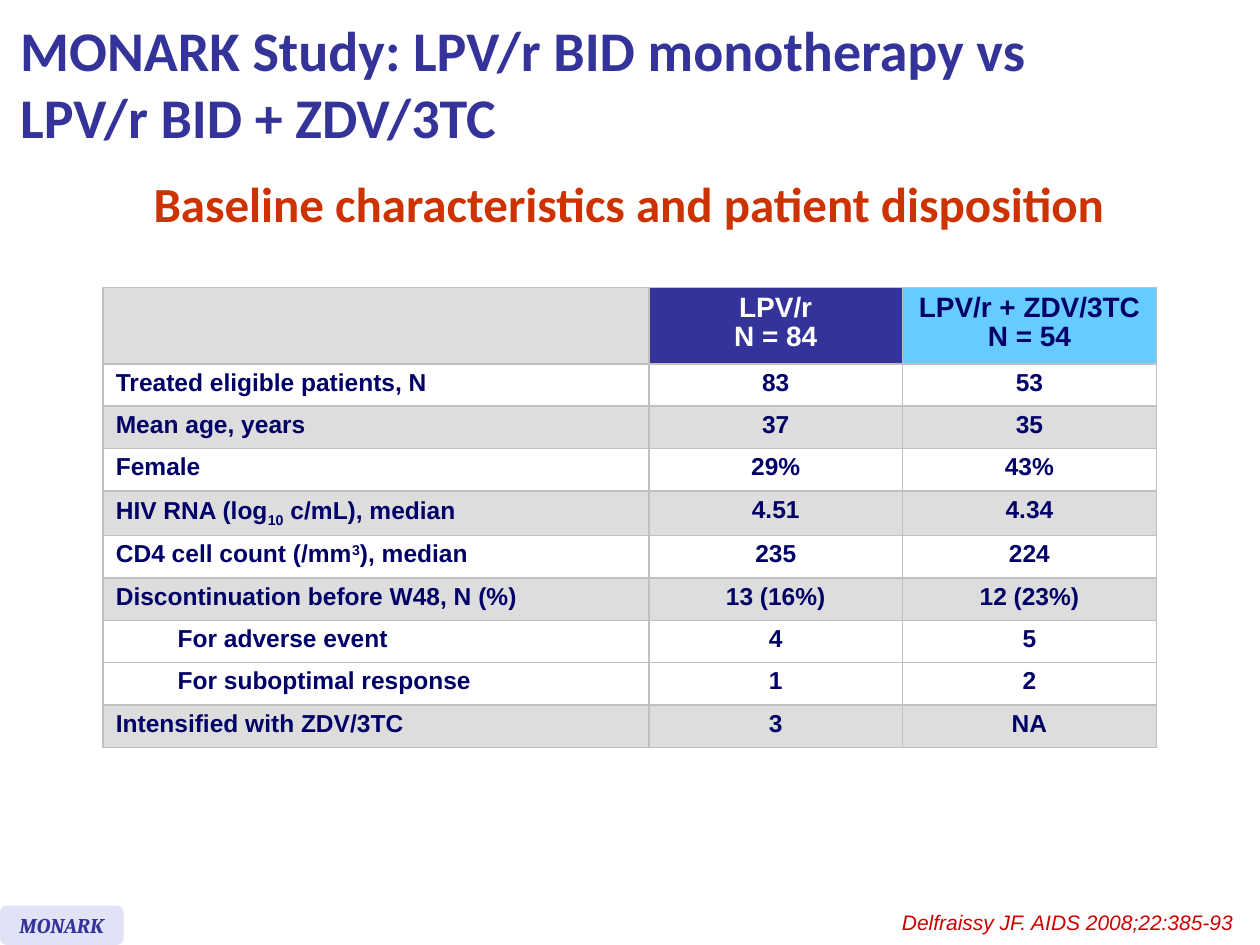
from dataclasses import dataclass

from lxml import etree
from pptx import Presentation
from pptx.dml.color import RGBColor
from pptx.enum.shapes import MSO_SHAPE
from pptx.enum.text import MSO_ANCHOR, MSO_AUTO_SIZE, PP_ALIGN
from pptx.oxml.ns import qn
from pptx.util import Pt

LEFT, CENTER = PP_ALIGN.LEFT, PP_ALIGN.CENTER
MIDDLE = MSO_ANCHOR.MIDDLE
NO_AUTOFIT = MSO_AUTO_SIZE.NONE
ROUNDED = MSO_SHAPE.ROUNDED_RECTANGLE
TITLE_ONLY = 5

COLORS = {
    "indigo": "333399", "sky": "66CCFF", "navy": "000066", "white": "FFFFFF",
    "grey": "DDDDDD", "border": "C0C0C0", "orange": "CC3300", "red": "CC0000",
    "lavender": "E2E2F6",
}


@dataclass
class TextStyle:
    size: float
    color: str
    face: str = "Arial"
    bold: bool = True
    italic: bool = False


@dataclass
class Measure:
    label: str
    mono: str
    triple: str
    fill: str
    indented: bool = False
    script: str = ""
    offset: int = 0
    rest: str = ""


MEASURES = [
    Measure("Treated eligible patients, N", "83", "53", "white"),
    Measure("Mean age, years", "37", "35", "grey"),
    Measure("Female", "29%", "43%", "white"),
    Measure("HIV RNA (log", "4.51", "4.34", "grey",
            script="10", offset=-25, rest=" c/mL), median"),
    Measure("CD4 cell count (/mm", "235", "224", "white",
            script="3", offset=30, rest="), median"),
    Measure("Discontinuation before W48, N (%)", "13 (16%)", "12 (23%)", "grey"),
    Measure("For adverse event", "4", "5", "white", indented=True),
    Measure("For suboptimal response", "1", "2", "white", indented=True),
    Measure("Intensified with ZDV/3TC", "3", "NA", "grey"),
]
BODY = TextStyle(14, "navy")
COLUMN_WIDTHS = [35.3, 276.5, 145, 145]
HEADER_HEIGHT, ROW_HEIGHT = 43.6, 24.24


def rgb(name: str) -> RGBColor:
    return RGBColor.from_string(COLORS[name])


def style_text(frame, style: TextStyle, align=LEFT, spacing=None) -> None:
    for paragraph in frame.paragraphs:
        paragraph.alignment = align
        paragraph.line_spacing = spacing
        font = paragraph.font
        font.name, font.size = style.face, Pt(style.size)
        font.bold, font.italic = style.bold, style.italic
        font.color.rgb = rgb(style.color)


def add_text(slide, box: tuple, text: str, style: TextStyle, align=LEFT,
             spacing=None, wrap: bool = True) -> None:
    frame = slide.shapes.add_textbox(*map(Pt, box)).text_frame
    frame.word_wrap = wrap
    frame.text = text
    style_text(frame, style, align, spacing)


def set_borders(cell, sides: str) -> None:
    """Draw a 1 pt line on each side named by a letter of L, R, T, B."""
    properties = cell._tc.get_or_add_tcPr()
    for index, side in enumerate("LRTB"):
        line = etree.Element(qn(f"a:ln{side}"), w=str(Pt(1)))
        if side in sides:
            fill = etree.SubElement(line, qn("a:solidFill"))
            etree.SubElement(fill, qn("a:srgbClr"), val=COLORS["border"])
        else:
            etree.SubElement(line, qn("a:noFill"))
        properties.insert(index, line)


def fill_cell(cell, text: str, fill: str, style: TextStyle = BODY,
              align=CENTER, sides: str = "LRTB") -> None:
    cell.fill.solid()
    cell.fill.fore_color.rgb = rgb(fill)
    set_borders(cell, sides)
    if text:
        cell.text_frame.text = text
        style_text(cell.text_frame, style, align, 0.95)
    else:
        paragraph = cell.text_frame.paragraphs[0]
        etree.SubElement(paragraph._p, qn("a:endParaRPr"), sz=str(style.size * 100))


def add_script(cell, measure: Measure) -> None:
    """Append the raised or lowered part of a label and the text after it."""
    paragraph = cell.text_frame.paragraphs[0]
    script = paragraph.add_run()
    script.text = measure.script
    script._r.get_or_add_rPr().set("baseline", str(measure.offset * 1000))
    paragraph.add_run().text = measure.rest


def fill_measure(table, row: int, measure: Measure) -> None:
    first, second, mono, triple = (table.cell(row, column) for column in range(4))
    if measure.indented:
        fill_cell(first, "", measure.fill, sides="LTB")
        fill_cell(second, measure.label, measure.fill, align=LEFT, sides="RTB")
    else:
        first.merge(second)
        fill_cell(first, measure.label, measure.fill, align=LEFT)
        fill_cell(second, "", measure.fill)
    if measure.script:
        add_script(first, measure)
    fill_cell(mono, measure.mono, measure.fill)
    fill_cell(triple, measure.triple, measure.fill)


def add_baseline_table(slide) -> None:
    rows = len(MEASURES) + 1
    height = HEADER_HEIGHT + ROW_HEIGHT * len(MEASURES)
    table = slide.shapes.add_table(
        rows, len(COLUMN_WIDTHS), Pt(59), Pt(164.2),
        Pt(sum(COLUMN_WIDTHS)), Pt(height)).table
    table.horz_banding = False
    for column, width in zip(table.columns, COLUMN_WIDTHS):
        column.width = Pt(width)
    for row in table.rows:
        row.height = Pt(ROW_HEIGHT)
    table.rows[0].height = Pt(HEADER_HEIGHT)

    table.cell(0, 0).merge(table.cell(0, 1))
    for column in range(2):
        fill_cell(table.cell(0, column), "", "grey")
    fill_cell(table.cell(0, 2), "LPV/r\nN = 84", "indigo", TextStyle(16, "white"))
    fill_cell(table.cell(0, 3), "LPV/r + ZDV/3TC\nN = 54", "sky", TextStyle(16, "navy"))
    for row, measure in enumerate(MEASURES, start=1):
        fill_measure(table, row, measure)


def set_title(slide) -> None:
    title = slide.shapes.title
    title.left, title.top, title.width, title.height = map(Pt, (4.3, 3.6, 715.7, 87))
    frame = title.text_frame
    frame.auto_size = NO_AUTOFIT
    frame.vertical_anchor = MIDDLE
    heading = frame.paragraphs[0]
    heading.add_run().text = "MONARK Study: LPV/r BID monotherapy vs"
    heading.add_line_break()
    heading.add_run().text = "LPV/r BID + ZDV/3TC"
    style_text(frame, TextStyle(32, "indigo", "Calibri"))


def add_study_tag(slide) -> None:
    tag = slide.shapes.add_shape(ROUNDED, Pt(0), Pt(517.5), Pt(70.6), Pt(22.5))
    tag.shadow.inherit = False
    tag.fill.solid()
    tag.fill.fore_color.rgb = rgb("lavender")
    tag.line.fill.background()
    frame = tag.text_frame
    frame.word_wrap = False
    frame.vertical_anchor = MIDDLE
    frame.text = "MONARK"
    style_text(frame, TextStyle(12, "indigo", "Cambria", italic=True), CENTER)


def main() -> None:
    deck = Presentation()
    deck.slide_width, deck.slide_height = Pt(720), Pt(540)
    slide = deck.slides.add_slide(deck.slide_layouts[TITLE_ONLY])
    set_title(slide)
    add_text(slide, (63.4, 113.8, 591.8, 22.3),
             "Baseline characteristics and patient disposition",
             TextStyle(28, "orange", "Calibri"), CENTER, Pt(15.2))
    add_baseline_table(slide)
    add_text(slide, (508.3, 516.2, 205.2, 21.6), "Delfraissy JF. AIDS 2008;22:385-93",
             TextStyle(12, "red", bold=False, italic=True), wrap=False)
    add_study_tag(slide)
    deck.save("out.pptx")


if __name__ == "__main__":
    main()
